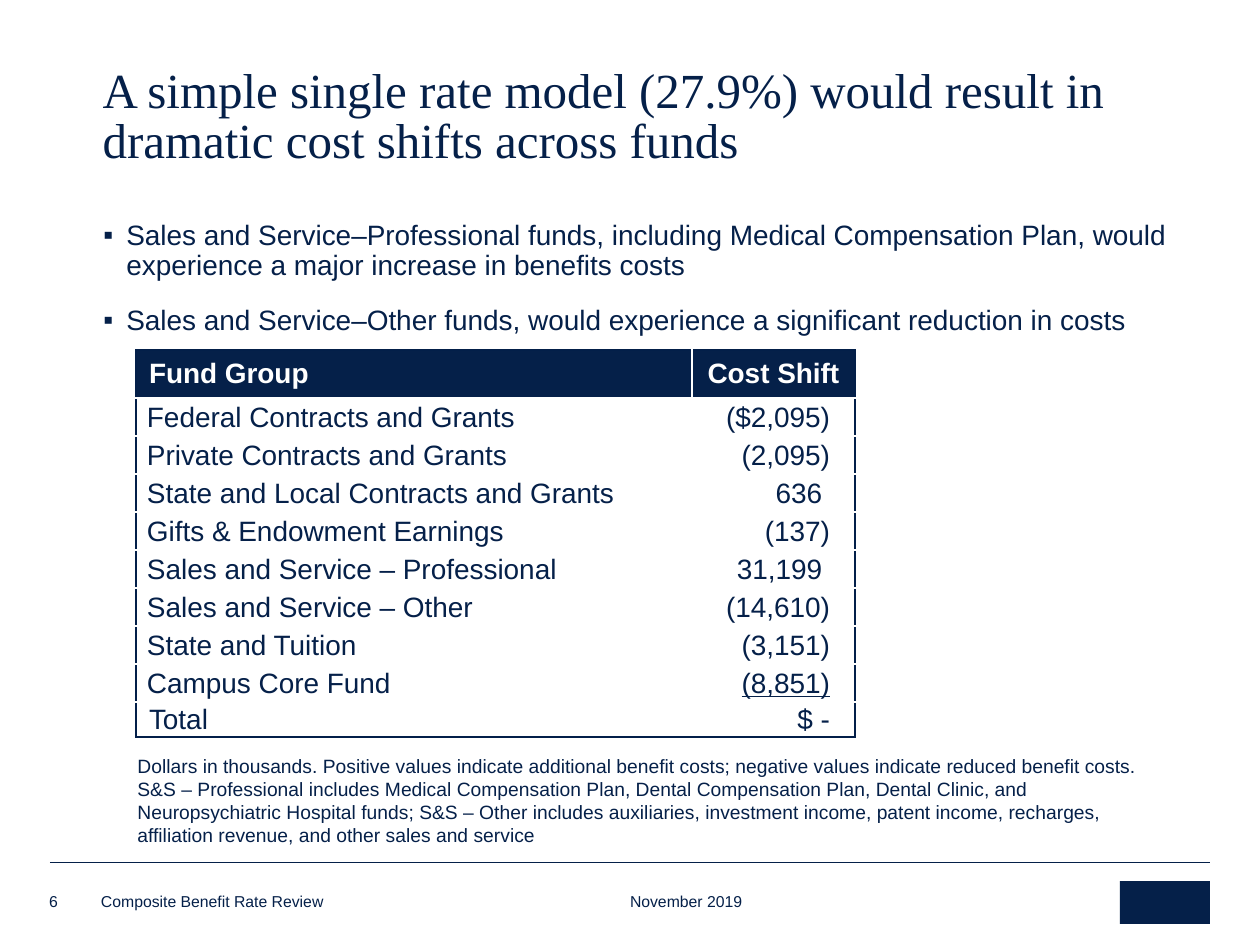
from dataclasses import dataclass

from lxml import etree
from pptx import Presentation
from pptx import util as u
from pptx.dml.color import RGBColor
from pptx.enum import shapes, text
from pptx.oxml import ns

PX = 914400 / 126


@dataclass(frozen=True)
class Theme:
    navy: RGBColor = RGBColor(0x05, 0x20, 0x49)
    border: RGBColor = RGBColor(0x03, 0x1F, 0x49)
    white: RGBColor = RGBColor(0xFF, 0xFF, 0xFF)
    serif: str = "Times New Roman"
    sans: str = "Arial"
    title: int = 28
    body: int = 16
    note: int = 11
    footer: int = 9


@dataclass(frozen=True)
class Box:
    left: int
    top: int
    width: int
    height: int

    def emu(self) -> tuple:
        return tuple(px(n) for n in (self.left, self.top, self.width, self.height))


@dataclass(frozen=True)
class Fund:
    group: str
    shift: str
    underline: bool = False


THEME = Theme()
BULLETS = [
    "Sales and Service–Professional funds, including Medical Compensation Plan, would "
    "experience a major increase in benefits costs",
    "Sales and Service–Other funds, would experience a significant reduction in costs",
]
FUNDS = [
    Fund("Federal Contracts and Grants", "($2,095)"),
    Fund("Private Contracts and Grants", "(2,095)"),
    Fund("State and Local Contracts and Grants", "636 "),
    Fund("Gifts & Endowment Earnings", "(137)"),
    Fund("Sales and Service – Professional", "31,199 "),
    Fund("Sales and Service – Other", "(14,610)"),
    Fund("State and Tuition", "(3,151)"),
    Fund("Campus Core Fund", "(8,851)", underline=True),
    Fund("Total", "$ -"),
]
NOTES = [
    "Dollars in thousands. Positive values indicate additional benefit costs; "
    "negative values indicate reduced benefit costs.",
    "S&S – Professional includes Medical Compensation Plan, Dental Compensation Plan, "
    "Dental Clinic, and Neuropsychiatric Hospital funds; S&S – Other includes auxiliaries, "
    "investment income, patent income, recharges, affiliation revenue, and other sales and service",
]


def px(n: int) -> u.Emu:
    return u.Emu(round(n * PX))


def add_run(paragraph, words: str, size: int, color=THEME.navy, face=THEME.sans,
            bold=False, underline=False) -> None:
    run = paragraph.add_run()
    run.text = words
    run.font.name, run.font.size = face, u.Pt(size)
    run.font.bold, run.font.underline = bold, underline
    run.font.color.rgb = color


def set_margins(target, left: int, top: int, right: int, bottom: int) -> None:
    target.margin_left, target.margin_top = px(left), px(top)
    target.margin_right, target.margin_bottom = px(right), px(bottom)


def add_text(slide, box: Box, lines: list[str], size: int) -> text.MSO_ANCHOR:
    frame = slide.shapes.add_textbox(*box.emu()).text_frame
    frame.word_wrap = True
    for i, line in enumerate(lines):
        paragraph = frame.paragraphs[0] if i == 0 else frame.add_paragraph()
        add_run(paragraph, line, size)
    return frame


def add_bullets(slide, box: Box, lines: list[str]) -> None:
    for paragraph in add_text(slide, box, lines, THEME.body).paragraphs:
        paragraph.line_spacing = 0.9
        paragraph.space_before = u.Pt(14)
        props = paragraph._p.get_or_add_pPr()
        props.set("marL", str(px(23)))
        props.set("indent", str(-px(23)))
        color = etree.SubElement(props, ns.qn("a:buClr"))
        etree.SubElement(color, ns.qn("a:srgbClr"), val=str(THEME.navy))
        etree.SubElement(props, ns.qn("a:buFont"), typeface=THEME.sans)
        etree.SubElement(props, ns.qn("a:buChar"), char="▪")


def add_footer(slide, box: Box, words: str, tab: int = 0) -> None:
    frame = add_text(slide, box, [words], THEME.footer)
    frame.vertical_anchor = text.MSO_ANCHOR.BOTTOM
    set_margins(frame, 0, 0, 0, 0)
    if tab:
        stops = etree.SubElement(frame.paragraphs[0]._p.get_or_add_pPr(), ns.qn("a:tabLst"))
        etree.SubElement(stops, ns.qn("a:tab"), pos=str(px(tab)), algn="l")


def set_borders(cell, sides: str) -> None:
    props = cell._tc.get_or_add_tcPr()
    for i, side in enumerate(s for s in "LRTB" if s in sides):
        line = etree.Element(ns.qn(f"a:ln{side}"), w=str(u.Pt(0.75)))
        fill = etree.SubElement(line, ns.qn("a:solidFill"))
        etree.SubElement(fill, ns.qn("a:srgbClr"), val=str(THEME.border))
        props.insert(i, line)


def add_fund_table(slide, left: int, top: int) -> None:
    widths = [556, 163]
    heights = [48] + [38] * (len(FUNDS) - 1) + [35]
    box = Box(left, top, sum(widths), sum(heights))
    table = slide.shapes.add_table(len(heights), len(widths), *box.emu()).table
    table.first_row = table.horz_banding = False
    for column, width in zip(table.columns, widths):
        column.width = px(width)
    last = len(FUNDS)
    for r, fund in enumerate([Fund("Fund Group", "Cost Shift"), *FUNDS]):
        table.rows[r].height = px(heights[r])
        header = r == 0
        edge = "T" if header else "B" if r == last else ""
        for c, words in enumerate((fund.group, fund.shift)):
            cell = table.cell(r, c)
            cell.vertical_anchor = text.MSO_ANCHOR.MIDDLE
            if header:
                set_margins(cell, 13, 1, 13, 1)
                cell.fill.solid()
                cell.fill.fore_color.rgb = THEME.navy
            else:
                set_margins(cell, 1 if c else 13 if r == last else 11, 1, 25 if c else 1, 0)
                cell.fill.background()
            set_borders(cell, "LR"[c] + edge)
            paragraph = cell.text_frame.paragraphs[0]
            if c:
                paragraph.alignment = text.PP_ALIGN.CENTER if header else text.PP_ALIGN.RIGHT
            add_run(paragraph, words, THEME.body, THEME.white if header else THEME.navy,
                    bold=header, underline=bool(c) and fund.underline)


def add_title(slide, box: Box, words: str) -> None:
    title = slide.shapes.title
    title.left, title.top, title.width, title.height = box.emu()
    frame = title.text_frame
    frame.word_wrap = True
    frame.auto_size = text.MSO_AUTO_SIZE.NONE
    frame.vertical_anchor = text.MSO_ANCHOR.BOTTOM
    paragraph = frame.paragraphs[0]
    paragraph.alignment = text.PP_ALIGN.LEFT
    paragraph.line_spacing = 0.85
    add_run(paragraph, words, THEME.title, face=THEME.serif)


def add_rule(slide, left: int, right: int, y: int) -> None:
    rule = slide.shapes.add_connector(shapes.MSO_CONNECTOR.STRAIGHT, px(left), px(y), px(right), px(y))
    rule.line.color.rgb = THEME.navy
    rule.line.width = u.Pt(0.25)
    etree.SubElement(rule._element.spPr, ns.qn("a:effectLst"))


def add_emblem(slide, box: Box) -> None:
    emblem = slide.shapes.add_shape(shapes.MSO_SHAPE.RECTANGLE, *box.emu())
    emblem.shadow.inherit = False
    emblem.fill.solid()
    emblem.fill.fore_color.rgb = THEME.navy
    emblem.line.fill.background()


def main() -> None:
    deck = Presentation()
    deck.slide_width, deck.slide_height = px(1260), px(945)
    slide = deck.slides.add_slide(deck.slide_layouts[5])
    add_rule(slide, 50, 1210, 862)
    add_emblem(slide, Box(1120, 881, 90, 43))
    add_title(slide, Box(90, 60, 1115, 115),
              "A simple single rate model (27.9%) would result in dramatic cost shifts across funds")
    add_bullets(slide, Box(91, 215, 1147, 553), BULLETS)
    add_footer(slide, Box(49, 890, 34, 21), "6")
    add_fund_table(slide, 136, 350)
    add_text(slide, Box(125, 748, 1028, 106), NOTES, THEME.note)
    add_footer(slide, Box(101, 892, 975, 19), "Composite Benefit Rate Review\tNovember 2019", tab=529)
    deck.save("out.pptx")


if __name__ == "__main__":
    main()
